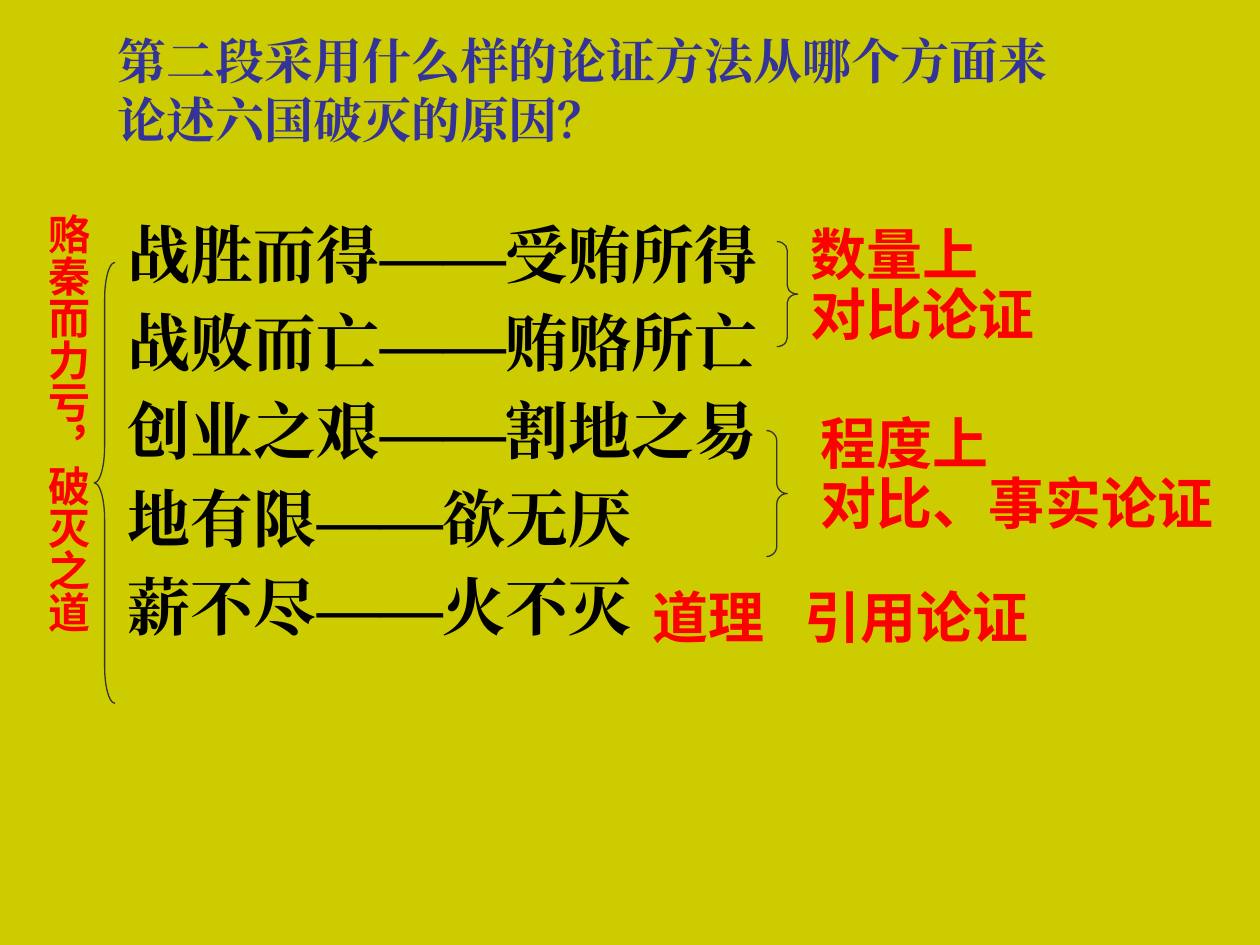
from lxml import etree
from pptx import Presentation
from pptx.dml.color import RGBColor
from pptx.enum.shapes import MSO_SHAPE
from pptx.enum.text import MSO_ANCHOR
from pptx.oxml.ns import qn
from pptx.util import Cm, Pt

LEFT_BRACE, RIGHT_BRACE = MSO_SHAPE.LEFT_BRACE, MSO_SHAPE.RIGHT_BRACE
TOP, MIDDLE = MSO_ANCHOR.TOP, MSO_ANCHOR.MIDDLE
RED = "FF0000"


def rgb(value):
    return RGBColor.from_string(value)


def add_text(box, text, size, font, color, line=None, gap=0, anchor=TOP):
    tf = s.shapes.add_textbox(*map(Cm, box)).text_frame
    tf.word_wrap = True
    tf.vertical_anchor = anchor
    tf.text = text
    for i, p in enumerate(tf.paragraphs):
        if line:
            p.line_spacing = Pt(line)
        if i and gap:
            p.space_before = Pt(gap)
        for r in p.runs:
            r.font.size, r.font.bold, r.font.name = Pt(size), True, font
            r.font.color.rgb = rgb(color)
            etree.SubElement(r.font._element, qn("a:ea"), typeface=font)
    return tf


prs = Presentation()
prs.slide_width, prs.slide_height = Cm(25.4), Cm(19.05)
s = prs.slides.add_slide(prs.slide_layouts[6])
s.background.fill.solid()
s.background.fill.fore_color.rgb = rgb("CCCC00")

# Question
add_text((2.12, 0.64, 19.69, 2.33),
         "第二段采用什么样的论证方法从哪个方面来论述六国破灭的原因？",
         28, "Times New Roman", "333399", line=33.7, anchor=MIDDLE)

# Contrasting pairs
pairs = [("战胜而得", "受贿所得"), ("战败而亡", "贿赂所亡"),
         ("创业之艰", "割地之易"), ("地有限", "欲无厌"), ("薪不尽", "火不灭")]
add_text((2.33, 4.23, 16.51, 12.57), "\n".join("——".join(pair) for pair in pairs),
         36, "Times New Roman", "000000", line=43.1, gap=7.2)

# Braces: shape, box, curve depth
for kind, box, depth in [
    (LEFT_BRACE, (1.9, 5.29, 0.42, 8.89), 1.75),
    (RIGHT_BRACE, (15.66, 4.87, 0.42, 2.12), 0.42),
    (RIGHT_BRACE, (15.45, 8.68, 0.42, 2.54), 0.5),
]:
    brace = s.shapes.add_shape(kind, *map(Cm, box))
    brace.adjustments[0] = depth
    brace.shadow.inherit = False
    brace.fill.background()
    brace.line.color.rgb = rgb("333333")
    brace.line.width = Pt(0.75)

# Vertical thesis
tf = add_text((0.3, 4.06, 1.7, 13.46), "赂秦而力亏，破灭之道", 24, "Arial", RED)
tf._txBody.bodyPr.set("vert", "eaVert")

# Argument methods
for box, text in [
    ((16.09, 4.45, 7.2, 2.69), "数量上\n对比论证"),
    ((16.3, 8.26, 8.68, 2.69), "程度上\n对比、事实论证"),
]:
    add_text(box, text, 32, "Arial", RED, line=34.3)

tf = add_text((12.91, 11.64, 9.1, 1.6), "道理\t引用论证", 32, "Arial", RED, line=38)
tabs = etree.SubElement(tf.paragraphs[0]._p.get_or_add_pPr(), qn("a:tabLst"))
etree.SubElement(tabs, qn("a:tab"), pos=str(Cm(3.05)), algn="l")

prs.save("out.pptx")
